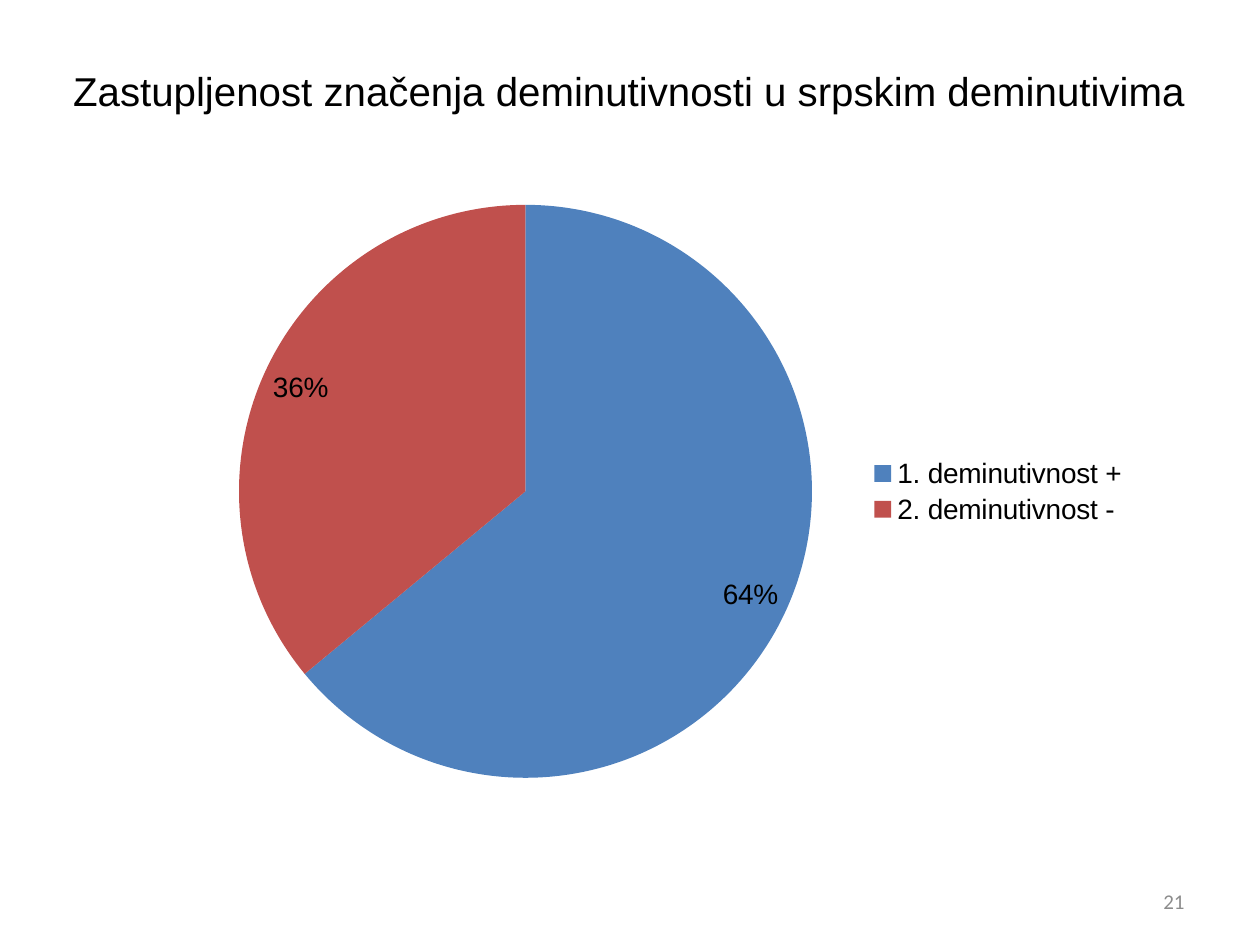
from lxml import etree
from pptx import Presentation
from pptx.chart.data import CategoryChartData as Data
from pptx.dml.color import RGBColor as RGB
from pptx.enum.chart import XL_CHART_TYPE as Kind, XL_LABEL_POSITION as Spot, XL_LEGEND_POSITION as Side
from pptx.enum.text import MSO_ANCHOR as Anchor, PP_ALIGN as Align
from pptx.oxml import parse_xml
from pptx.oxml.ns import nsdecls, qn
from pptx.util import Inches, Pt

COLORS = {"text": "000000", "number": "8C8C8C", "plus": "4F81BD", "minus": "C0504D"}


def style(font, size, color, face="Arial"):
    font.name = face
    font.size = Pt(size)
    font.color.rgb = RGB.from_string(COLORS[color])


def place(shape, box):
    shape.left, shape.top, shape.width, shape.height = map(Inches, box)


def write(shape, text, align, size, color, face="Arial"):
    frame = shape.text_frame
    frame.word_wrap = True
    frame.vertical_anchor = Anchor.MIDDLE
    frame.text = text
    para = frame.paragraphs[0]
    para.alignment = align
    style(para.runs[0].font, size, color, face)


def add_title(slide, box):
    title = slide.shapes.title
    place(title, box)
    write(title, "Zastupljenost značenja deminutivnosti u srpskim deminutivima",
          Align.CENTER, 23, "text")


def set_plot(chart, x, y, w, h):
    area = chart.plots[0]._element.getparent()
    for old in area.findall(qn("c:layout")):
        area.remove(old)
    layout = parse_xml(f"<c:layout {nsdecls('c')}><c:manualLayout/></c:layout>")
    parts = [("layoutTarget", "inner"), ("xMode", "edge"), ("yMode", "edge"),
             ("x", x), ("y", y), ("w", w), ("h", h)]
    for tag, val in parts:
        etree.SubElement(layout[0], qn(f"c:{tag}")).set("val", str(val))
    area.insert(0, layout)


def add_pie(slide, box):
    data = Data()
    data.categories = ["1. deminutivnost +", "2. deminutivnost -"]
    data.add_series("Series 1", [64, 36])
    chart = slide.shapes.add_chart(Kind.PIE, *map(Inches, box), data).chart
    style(chart.font, 16, "text")
    chart.has_title = False
    chart.has_legend = True
    chart.legend.position = Side.RIGHT
    chart.legend.include_in_layout = False

    plot = chart.plots[0]
    plot.vary_by_categories = True
    for i, name in enumerate(["plus", "minus"]):
        fill = plot.series[0].points[i].format.fill
        fill.solid()
        fill.fore_color.rgb = RGB.from_string(COLORS[name])
    plot.has_data_labels = True
    labels = plot.data_labels
    labels.show_percentage = True
    labels.show_value = False
    labels.number_format = "0%"
    labels.number_format_is_linked = False
    labels.position = Spot.INSIDE_END
    style(labels.font, 16, "text")
    set_plot(chart, 0.055, 0.03, 0.6, 0.94)


def add_number(slide, box):
    number = slide.shapes.add_textbox(*map(Inches, box))
    write(number, "21", Align.RIGHT, 12, "number", "Calibri")


def main():
    deck = Presentation()
    deck.slide_width, deck.slide_height = Inches(10), Inches(7.5)
    slide = deck.slides.add_slide(deck.slide_layouts.get_by_name("Title Only"))
    add_number(slide, (7.17, 6.95, 2.33, 0.4))
    add_pie(slide, (1.48, 1.48, 7.58, 4.84))
    add_title(slide, (0, 0.47, 10, 0.49))
    deck.save("out.pptx")


if __name__ == "__main__":
    main()
